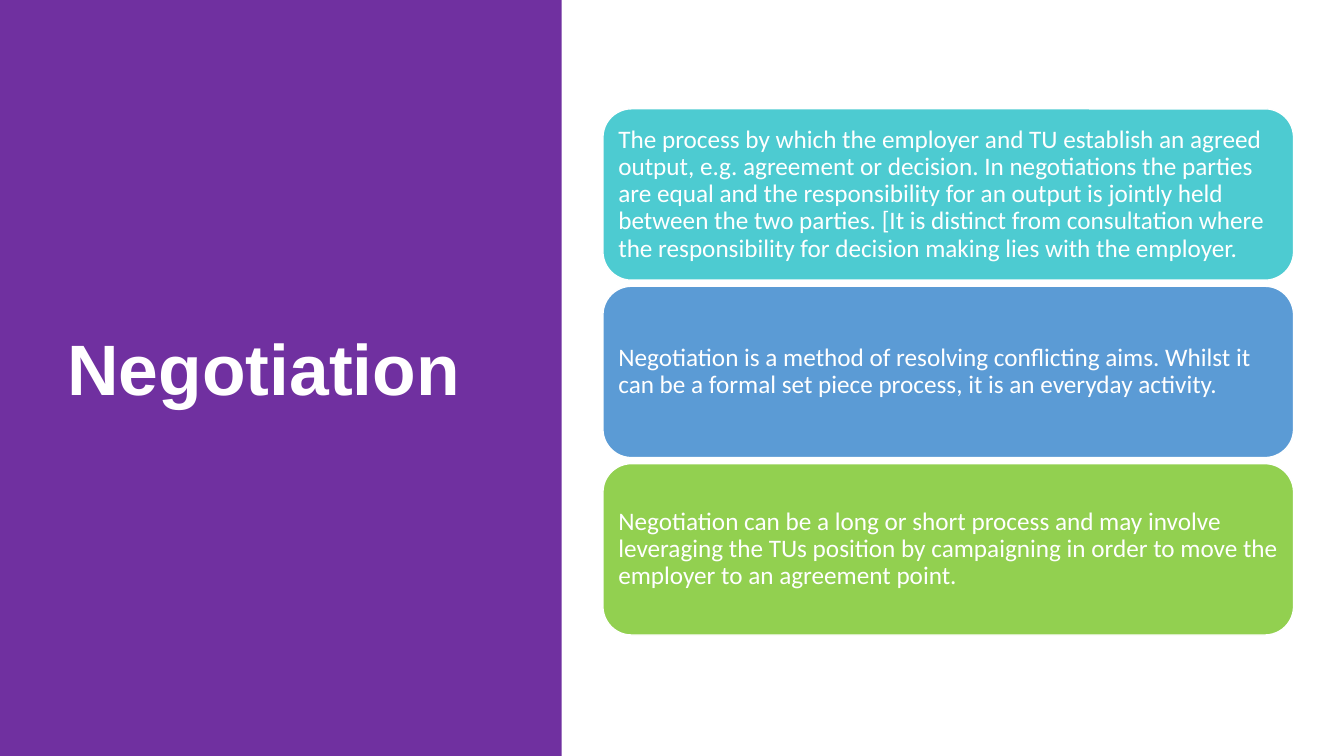
from pptx import Presentation
from pptx.dml.color import RGBColor
from pptx.enum.shapes import MSO_SHAPE
from pptx.enum.text import MSO_ANCHOR, PP_ALIGN
from pptx.util import Inches, Pt

RECT, ROUNDED = MSO_SHAPE.RECTANGLE, MSO_SHAPE.ROUNDED_RECTANGLE
MIDDLE, LEFT = MSO_ANCHOR.MIDDLE, PP_ALIGN.LEFT

COLORS = {
    "white": "FFFFFF",
    "purple": "7030A0",
    "teal": "4DCBD1",
    "blue": "5B9BD5",
    "green": "92D050",
}

POINTS = [
    ("teal", "The process by which the employer and TU establish an agreed output, "
             "e.g. agreement or decision. In negotiations the parties are equal and "
             "the responsibility for an output is jointly held between the two parties. "
             "[It is distinct from consultation where the responsibility for decision "
             "making lies with the employer."),
    ("blue", "Negotiation is a method of resolving conflicting aims. Whilst it can be "
             "a formal set piece process, it is an everyday activity."),
    ("green", "Negotiation can be a long or short process and may involve leveraging "
              "the TUs position by campaigning in order to move the employer to an "
              "agreement point."),
]
CARD_LEFT, CARD_TOP, CARD_WIDTH, CARD_HEIGHT = 5.98, 1.08, 6.85, 1.7
CARD_PITCH = 1.76


def rgb(name):
    return RGBColor.from_string(COLORS[name])


def set_text(sp, text, font="Calibri", size=18, color="white", bold=False, inset=0.07):
    tf = sp.text_frame
    tf.word_wrap = True
    tf.vertical_anchor = MIDDLE
    tf.margin_left = tf.margin_right = tf.margin_top = tf.margin_bottom = Inches(inset)
    p = tf.paragraphs[0]
    p.alignment = LEFT
    p.line_spacing = 0.9
    r = p.add_run()
    r.text = text
    r.font.name = font
    r.font.size = Pt(size)
    r.font.bold = bold
    r.font.color.rgb = rgb(color)


def add_block(s, kind, left, top, width, height, fill, line=None):
    sp = s.shapes.add_shape(kind, Inches(left), Inches(top), Inches(width), Inches(height))
    sp.shadow.inherit = False
    sp.fill.solid()
    sp.fill.fore_color.rgb = rgb(fill)
    if line:
        sp.line.color.rgb = rgb(line)
        sp.line.width = Pt(1)
    else:
        sp.line.fill.background()
    return sp


def add_title(s, text):
    sp = s.shapes.add_textbox(Inches(0.57), Inches(0.68), Inches(4.16), Inches(6.02))
    set_text(sp, text, font="Arial", size=51, bold=True, inset=0.1)


def main():
    prs = Presentation()
    prs.slide_width, prs.slide_height = Inches(13.33), Inches(7.5)
    s = prs.slides.add_slide(prs.slide_layouts[6])

    add_block(s, RECT, 0, 0, 5.57, 7.5, "purple")
    add_title(s, "Negotiation")
    for i, (fill, text) in enumerate(POINTS):
        card = add_block(s, ROUNDED, CARD_LEFT, CARD_TOP + i * CARD_PITCH,
                         CARD_WIDTH, CARD_HEIGHT, fill, line="white")
        set_text(card, text)

    prs.save("out.pptx")


if __name__ == "__main__":
    main()
